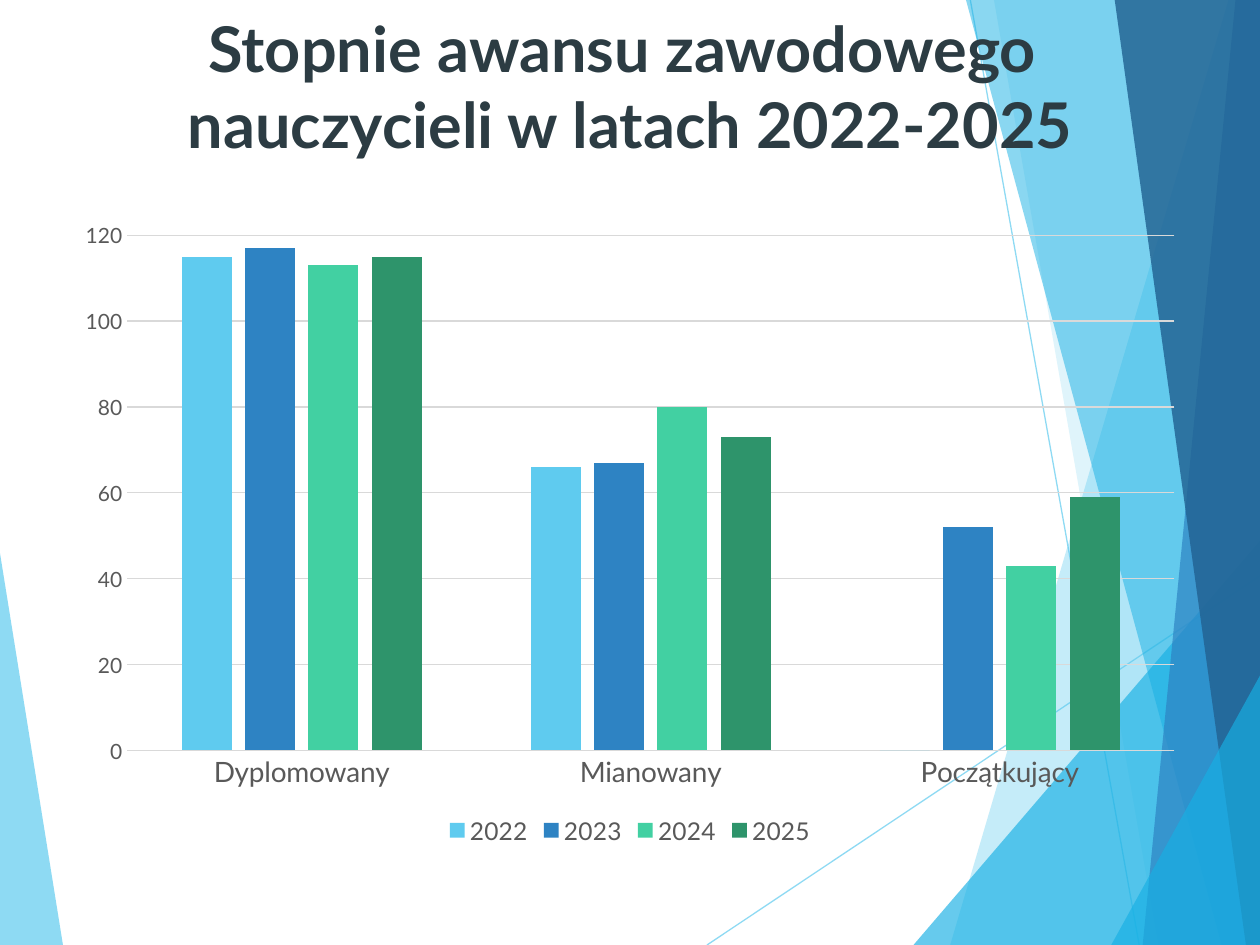
import pptx
import pptx.chart.data
import pptx.dml.color
import pptx.enum.chart
import pptx.enum.shapes
import pptx.enum.text
import pptx.oxml
import pptx.oxml.ns
import pptx.util

Pt = pptx.util.Pt
RGBColor = pptx.dml.color.RGBColor
XL = pptx.enum.chart

SKY = RGBColor(0x5F, 0xCB, 0xEF)
CYAN = RGBColor(0x17, 0xB0, 0xE4)
BLUE = RGBColor(0x2E, 0x83, 0xC3)
NAVY = RGBColor(0x22, 0x62, 0x92)
MINT = RGBColor(0x42, 0xD0, 0xA2)
GREEN = RGBColor(0x2E, 0x94, 0x6B)
SLATE = RGBColor(0x2C, 0x3C, 0x43)
GREY = RGBColor(0x59, 0x59, 0x59)
PALE_GREY = RGBColor(0xD9, 0xD9, 0xD9)
FONT = "Lato"

TITLE_LINES = ["Stopnie awansu zawodowego ", "nauczycieli w latach 2022-2025"]
RANKS = ["Dyplomowany", "Mianowany", "Początkujący"]
YEARS = [
    ("2022", (115, 66, 0), SKY),
    ("2023", (117, 67, 52), BLUE),
    ("2024", (113, 80, 43), MINT),
    ("2025", (115, 73, 59), GREEN),
]

WIDTH, HEIGHT = 720, 540
# Corner points, colour, opacity in percent; back to front
LEFT_FACET = ([(0, 316), (35.5, HEIGHT), (0, HEIGHT)], SKY, 70)
RAYS = [((404, HEIGHT), (WIDTH, 329)), ((554.5, 0), (651, HEIGHT))]
RAY_OPACITY = 70


def right_facet(top_x, bottom_x, colour, opacity, top_y=0):
    """A facet that reaches from its slanted left edge to the slide's right edge."""
    corners = [(top_x, top_y), (bottom_x, HEIGHT), (WIDTH, HEIGHT), (WIDTH, top_y)]
    return corners, colour, opacity


RIGHT_FACETS = [
    right_facet(702, 543, SKY, 36),
    right_facet(567.5, 661.5, SKY, 20),
    right_facet(WIDTH, 522.5, CYAN, 66, top_y=309),
    right_facet(552, 698.5, CYAN, 50),
    right_facet(706.5, 653, BLUE, 70),
    right_facet(637, 711.5, NAVY, 82),
    right_facet(WIDTH, 635, CYAN, 66, top_y=386),
]


def paint(fill, colour, opacity):
    fill.solid()
    fill.fore_color.rgb = colour
    colour_xml = fill._xPr.find(".//" + pptx.oxml.ns.qn("a:srgbClr"))
    alpha = pptx.oxml.parse_xml(
        f'<a:alpha {pptx.oxml.ns.nsdecls("a")} val="{opacity * 1000}"/>')
    colour_xml.append(alpha)


def add_facet(shapes, corners, colour, opacity):
    builder = shapes.build_freeform(*corners[0], scale=Pt(1))
    builder.add_line_segments(corners[1:], close=True)
    facet = builder.convert_to_shape()
    facet.shadow.inherit = False
    paint(facet.fill, colour, opacity)
    facet.line.fill.background()


def add_ray(shapes, start, end):
    ray = shapes.add_connector(
        pptx.enum.shapes.MSO_CONNECTOR.STRAIGHT, *map(Pt, start + end))
    ray.line.width = Pt(0.75)
    paint(ray.line.fill, SKY, RAY_OPACITY)
    ray._element.spPr.append(
        pptx.oxml.parse_xml(f'<a:effectLst {pptx.oxml.ns.nsdecls("a")}/>'))


def set_font(font, size, colour, bold=False):
    font.name = FONT
    font.size = Pt(size)
    font.color.rgb = colour
    font.bold = bold


def set_line(line):
    line.color.rgb = PALE_GREY
    line.width = Pt(0.75)


def add_rank_chart(shapes):
    data = pptx.chart.data.CategoryChartData()
    data.categories = RANKS
    for year, counts, _ in YEARS:
        data.add_series(year, counts)
    chart = shapes.add_chart(XL.XL_CHART_TYPE.COLUMN_CLUSTERED,
                             Pt(36), Pt(120), Pt(648), Pt(366), data).chart
    chart.has_title = False
    set_font(chart.font, 10, GREY)

    plot = chart.plots[0]
    plot.gap_width = 219
    plot.overlap = -27
    plot.vary_by_categories = False
    for series, (_, _, colour) in zip(plot.series, YEARS):
        series.format.fill.solid()
        series.format.fill.fore_color.rgb = colour

    for axis, size in ((chart.category_axis, 16), (chart.value_axis, 12)):
        axis.major_tick_mark = axis.minor_tick_mark = XL.XL_TICK_MARK.NONE
        set_font(axis.tick_labels.font, size, GREY)
    set_line(chart.category_axis.format.line)
    counts_axis = chart.value_axis
    counts_axis.minimum_scale, counts_axis.maximum_scale = 0, 120
    counts_axis.major_unit = 20
    counts_axis.format.line.fill.background()
    set_line(counts_axis.major_gridlines.format.line)

    chart.has_legend = True
    chart.legend.position = XL.XL_LEGEND_POSITION.BOTTOM
    chart.legend.include_in_layout = False
    set_font(chart.legend.font, 14, GREY)


def add_title(shapes):
    frame = shapes.add_textbox(Pt(7), Pt(2), Pt(706), Pt(104)).text_frame
    frame.word_wrap = True
    frame.vertical_anchor = pptx.enum.text.MSO_ANCHOR.TOP
    heading = frame.paragraphs[0]
    heading.alignment = pptx.enum.text.PP_ALIGN.CENTER
    for index, words in enumerate(TITLE_LINES):
        if index:
            heading.add_line_break()
        run = heading.add_run()
        run.text = words
        set_font(run.font, 36, SLATE, bold=True)


def main():
    deck = pptx.Presentation()
    deck.slide_width, deck.slide_height = Pt(WIDTH), Pt(HEIGHT)
    shapes = deck.slides.add_slide(deck.slide_layouts[6]).shapes
    add_facet(shapes, *LEFT_FACET)
    for start, end in RAYS:
        add_ray(shapes, start, end)
    for facet in RIGHT_FACETS:
        add_facet(shapes, *facet)
    add_rank_chart(shapes)
    add_title(shapes)
    deck.save("out.pptx")


if __name__ == "__main__":
    main()
